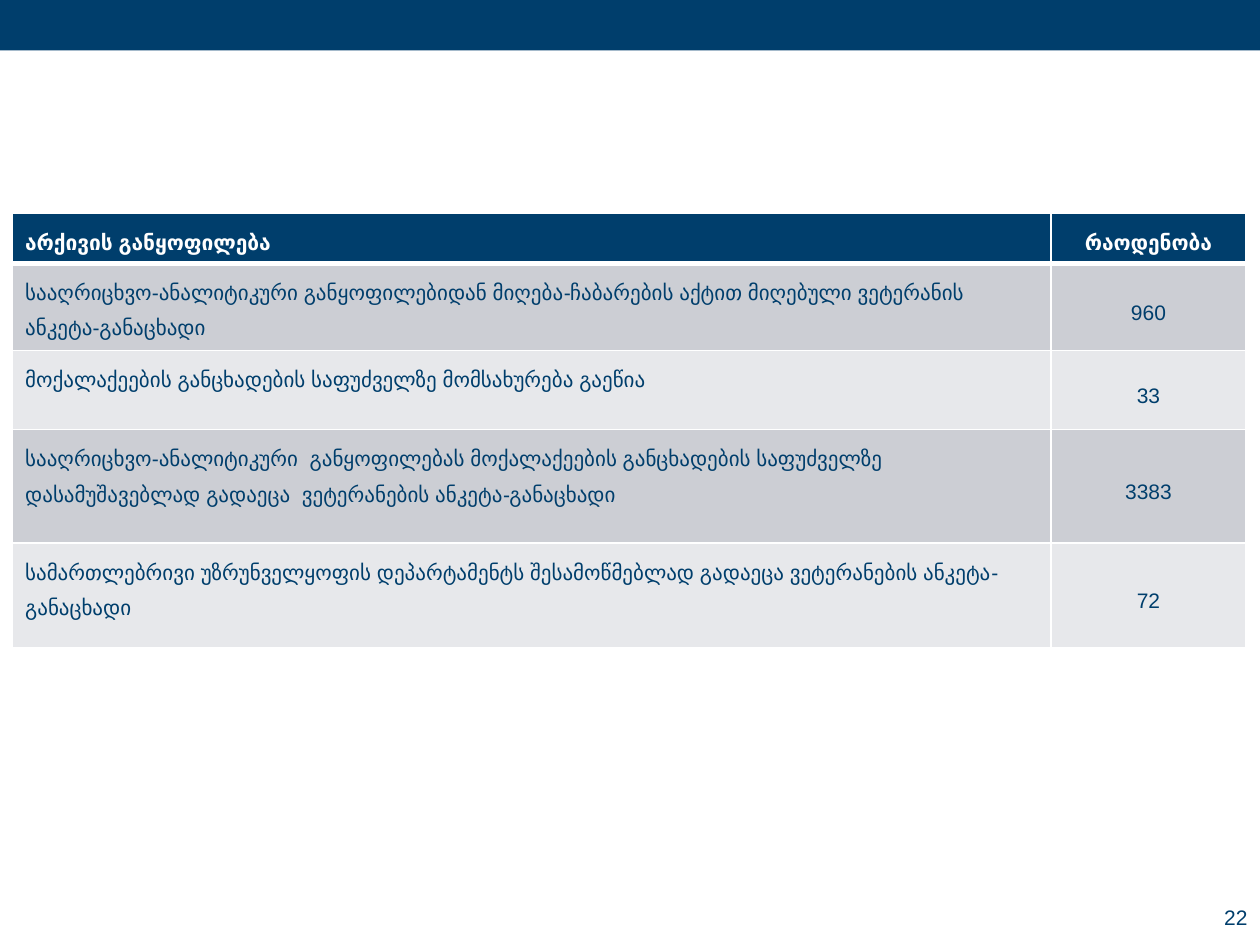
from lxml import etree
from pptx import Presentation
from pptx.dml.color import RGBColor
from pptx.enum.shapes import MSO_SHAPE
from pptx.enum.text import MSO_ANCHOR, PP_ALIGN
from pptx.oxml.ns import qn
from pptx.util import Inches, Pt

RECT = MSO_SHAPE.RECTANGLE
TOP, MIDDLE = MSO_ANCHOR.TOP, MSO_ANCHOR.MIDDLE
LEFT, CENTER, RIGHT = PP_ALIGN.LEFT, PP_ALIGN.CENTER, PP_ALIGN.RIGHT

NAVY = RGBColor(0x00, 0x3E, 0x6C)
WHITE = RGBColor(0xFF, 0xFF, 0xFF)
DARK_BAND = RGBColor(0xCC, 0xCE, 0xD4)
LIGHT_BAND = RGBColor(0xE7, 0xE8, 0xEB)

FONT = {"name": "Arial", "size": Pt(12)}
COL_WIDTHS = [8.24, 1.55]
ROW_HEIGHTS = [0.4, 0.69, 0.63, 0.9, 0.83]
ROWS = [
    ("არქივის განყოფილება", "რაოდენობა"),
    ("სააღრიცხვო-ანალიტიკური განყოფილებიდან მიღება-ჩაბარების აქტით "
     "მიღებული ვეტერანის ანკეტა-განაცხადი", "960"),
    ("მოქალაქეების განცხადების საფუძველზე მომსახურება გაეწია", "33"),
    ("სააღრიცხვო-ანალიტიკური  განყოფილებას მოქალაქეების განცხადების საფუძველზე "
     "დასამუშავებლად გადაეცა  ვეტერანების ანკეტა-განაცხადი", "3383"),
    ("სამართლებრივი უზრუნველყოფის დეპარტამენტს შესამოწმებლად გადაეცა "
     "ვეტერანების ანკეტა-განაცხადი", "72"),
]


def write_text(tf, text, color, align, bold=False, spacing=None):
    p = tf.paragraphs[0]
    p.alignment = align
    p.line_spacing = spacing
    r = p.add_run()
    r.text = text
    for name, value in {**FONT, "bold": bold}.items():
        setattr(r.font, name, value)
    r.font.color.rgb = color


def set_borders(cell, widths):
    """Draw white cell borders; widths maps each side (L, R, T, B) to points."""
    tc_pr = cell._tc.get_or_add_tcPr()
    for side, width in widths.items():
        ln = etree.SubElement(tc_pr, qn(f"a:ln{side}"), w=str(Pt(width)))
        fill = etree.SubElement(ln, qn("a:solidFill"))
        etree.SubElement(fill, qn("a:srgbClr"), val=str(WHITE))


def add_top_bar(slide, width):
    sp = slide.shapes.add_shape(RECT, 0, 0, width, Inches(0.4))
    sp.shadow.inherit = False
    sp.fill.solid()
    sp.fill.fore_color.rgb = NAVY
    sp.line.fill.background()


def fill_cell(cell, text, row, col):
    header = row == 0
    set_borders(cell, {"L": 1, "R": 1, "T": 3 if row == 1 else 1, "B": 3 if header else 1})
    cell.fill.solid()
    cell.fill.fore_color.rgb = NAVY if header else (LIGHT_BAND, DARK_BAND)[row % 2]
    cell.vertical_anchor = MIDDLE if col and not header else TOP
    write_text(cell.text_frame, text, WHITE if header else NAVY,
               CENTER if col else LEFT, bold=header, spacing=1.5)


def add_archive_table(slide):
    table = slide.shapes.add_table(
        len(ROWS), len(COL_WIDTHS), Inches(0.1), Inches(1.69),
        Inches(sum(COL_WIDTHS)), Inches(sum(ROW_HEIGHTS))).table
    for column, width in zip(table.columns, COL_WIDTHS):
        column.width = Inches(width)
    for i, (height, texts) in enumerate(zip(ROW_HEIGHTS, ROWS)):
        table.rows[i].height = Inches(height)
        for j, text in enumerate(texts):
            fill_cell(table.cell(i, j), text, i, j)


def add_page_number(slide, number):
    box = slide.shapes.add_textbox(Inches(8.83), Inches(7.1), Inches(1.17), Inches(0.36))
    tf = box.text_frame
    tf.word_wrap = True
    tf.vertical_anchor = MIDDLE
    write_text(tf, number, NAVY, RIGHT)


def main():
    prs = Presentation()
    prs.slide_width, prs.slide_height = Inches(10), Inches(7.5)
    slide = prs.slides.add_slide(prs.slide_layouts[6])
    add_top_bar(slide, prs.slide_width)
    add_archive_table(slide)
    add_page_number(slide, "22")
    prs.save("out.pptx")


if __name__ == "__main__":
    main()
